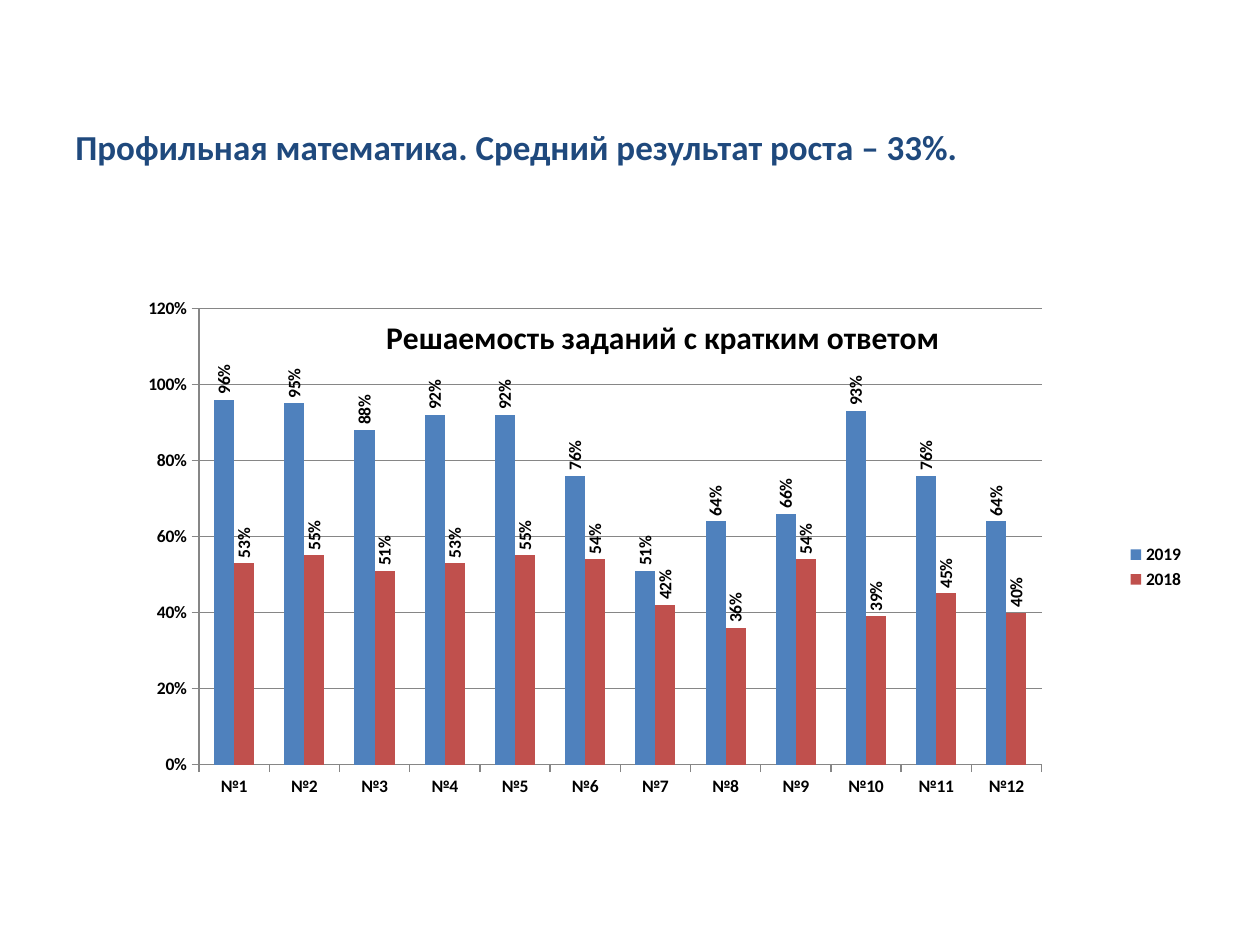
from lxml import etree
from pptx import Presentation
from pptx.chart.data import CategoryChartData
from pptx.dml.color import RGBColor
from pptx.enum.chart import XL_CHART_TYPE, XL_LABEL_POSITION, XL_LEGEND_POSITION, XL_TICK_MARK
from pptx.enum.text import MSO_ANCHOR
from pptx.oxml.ns import qn
from pptx.util import Inches, Pt

COLUMNS = XL_CHART_TYPE.COLUMN_CLUSTERED
LABEL_ABOVE = XL_LABEL_POSITION.OUTSIDE_END
LEGEND_RIGHT = XL_LEGEND_POSITION.RIGHT
TICK_OUT, TICK_NONE = XL_TICK_MARK.OUTSIDE, XL_TICK_MARK.NONE
MIDDLE = MSO_ANCHOR.MIDDLE

NAVY = RGBColor(0x1F, 0x49, 0x7D)
BLACK = RGBColor(0x00, 0x00, 0x00)
GRAY = RGBColor(0x86, 0x86, 0x86)
BLUE = RGBColor(0x4F, 0x81, 0xBD)
RED = RGBColor(0xC0, 0x50, 0x4D)

FONT = "Calibri"
WIDTH, HEIGHT = 10, 7.5
MARGIN = 0.05 * WIDTH
CONTENT_WIDTH = WIDTH - 2 * MARGIN

TASKS = [f"№{number}" for number in range(1, 13)]
YEARS = {
    "2019": (BLUE, [0.96, 0.95, 0.88, 0.92, 0.92, 0.76, 0.51, 0.64, 0.66, 0.93, 0.76, 0.64]),
    "2018": (RED, [0.53, 0.55, 0.51, 0.53, 0.55, 0.54, 0.42, 0.36, 0.54, 0.39, 0.45, 0.4]),
}


def set_font(font, size, color):
    for attribute, value in {"name": FONT, "size": Pt(size), "bold": True}.items():
        setattr(font, attribute, value)
    font.color.rgb = color


def set_layout(parent, position, **values):
    """Place a chart part by shares of the chart's size."""
    for old_layout in parent.findall(qn("c:layout")):
        parent.remove(old_layout)
    layout = etree.Element(qn("c:layout"))
    manual = etree.SubElement(layout, qn("c:manualLayout"))
    for tag, value in values.items():
        etree.SubElement(manual, qn(f"c:{tag}")).set("val", str(value))
    parent.insert(position, layout)


def add_heading(slide, box):
    frame = slide.shapes.add_textbox(*map(Inches, box)).text_frame
    frame.word_wrap = True
    frame.vertical_anchor = MIDDLE
    run = frame.paragraphs[0].add_run()
    run.text = "Профильная математика. Средний результат роста – 33%."
    set_font(run.font, 20, NAVY)


def style_axes(chart):
    scale = chart.value_axis
    for axis in (chart.category_axis, scale):
        axis.major_tick_mark = TICK_OUT
        axis.minor_tick_mark = TICK_NONE
        axis.format.line.color.rgb = GRAY
    for attribute, value in {"minimum_scale": 0, "maximum_scale": 1.2, "major_unit": 0.2}.items():
        setattr(scale, attribute, value)
    scale.major_gridlines.format.line.color.rgb = GRAY
    scale.tick_labels.number_format = "0%"
    scale.tick_labels.number_format_is_linked = False


def style_year(series, color):
    series.format.fill.solid()
    series.format.fill.fore_color.rgb = color
    labels = series.data_labels
    for attribute, value in {"show_value": True, "position": LABEL_ABOVE,
                             "number_format": "0%", "number_format_is_linked": False}.items():
        setattr(labels, attribute, value)
    set_font(labels.font, 10, BLACK)
    # Turn the percentages to read upwards
    body = labels._element.find(qn("c:txPr")).find(qn("a:bodyPr"))
    body.set("rot", "-5400000")
    body.set("vert", "horz")


def add_results_chart(slide, box):
    results = CategoryChartData(number_format="0%")
    results.categories = TASKS
    for year, (_, shares) in YEARS.items():
        results.add_series(year, shares)
    chart = slide.shapes.add_chart(COLUMNS, *map(Inches, box), results).chart
    set_font(chart.font, 10, BLACK)

    # Title laid over the plot
    chart.has_title = True
    title = chart.chart_title
    title.text_frame.text = "Решаемость заданий с кратким ответом"
    set_font(title.text_frame.paragraphs[0].runs[0].font, 18, BLACK)
    set_layout(title._element, 1, xMode="edge", yMode="edge", x=0.28, y=0.03)
    title._element.find(qn("c:overlay")).set("val", "1")

    # Plot and axes
    set_layout(chart._chartSpace.chart.plotArea, 0, layoutTarget="inner",
               xMode="edge", yMode="edge", x=0.12, y=0.028, w=0.743, h=0.833)
    style_axes(chart)

    # Columns by year
    columns = chart.plots[0]
    for attribute, value in {"gap_width": 150, "overlap": 0, "vary_by_categories": False}.items():
        setattr(columns, attribute, value)
    for series in columns.series:
        style_year(series, YEARS[series.name][0])

    # Legend
    chart.has_legend = True
    chart.legend.position = LEGEND_RIGHT
    chart.legend.include_in_layout = False


def main():
    presentation = Presentation()
    presentation.slide_width, presentation.slide_height = Inches(WIDTH), Inches(HEIGHT)
    slide = presentation.slides.add_slide(presentation.slide_layouts[6])
    add_heading(slide, (MARGIN, 0.1 * HEIGHT, CONTENT_WIDTH, 0.11 * HEIGHT))
    add_results_chart(slide, (MARGIN, 0.31 * HEIGHT, CONTENT_WIDTH, 0.58 * HEIGHT))
    presentation.save("out.pptx")


if __name__ == "__main__":
    main()
